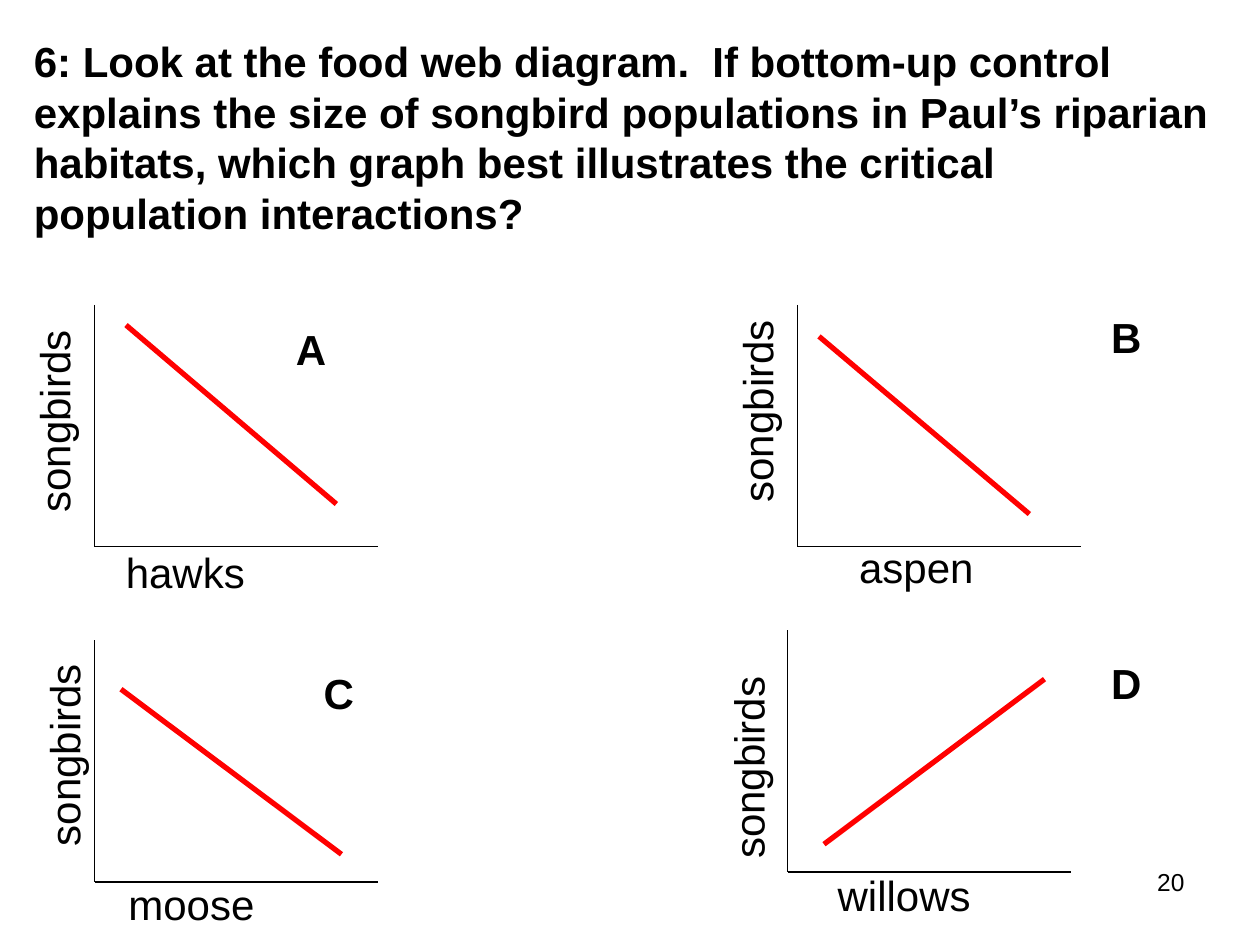
"""Build a quiz slide with four small songbird graphs."""
from pptx import Presentation
from pptx.dml.color import RGBColor
from pptx.enum.shapes import MSO_CONNECTOR
from pptx.enum.text import MSO_ANCHOR, MSO_AUTO_SIZE, PP_ALIGN
from pptx.oxml.ns import qn
from pptx.util import Inches, Pt
from lxml.etree import SubElement

BLACK, RED = "000000", "FF0000"
AXIS_WIDTH, AXIS_HEIGHT = 2.25, 1.92
LABEL_HEIGHT = 0.5


def colour(value):
    return RGBColor.from_string(value)


class QuizSlide:
    def __init__(self, page, font="Arial", size=24):
        self.page, self.font, self.size = page, font, size

    def text(self, words, left, top, width, height=LABEL_HEIGHT, bold=False, size=None,
             align=PP_ALIGN.LEFT, anchor=MSO_ANCHOR.TOP, wrap=True, rotation=0):
        box = self.page.shapes.add_textbox(
            Inches(left), Inches(top), Inches(width), Inches(height))
        box.rotation = rotation
        frame = box.text_frame
        frame.word_wrap = wrap
        frame.auto_size = MSO_AUTO_SIZE.NONE if wrap else MSO_AUTO_SIZE.SHAPE_TO_FIT_TEXT
        frame.vertical_anchor = anchor
        para = frame.paragraphs[0]
        para.text = words
        para.alignment = align
        para.font.name = self.font
        para.font.size = Pt(size or self.size)
        para.font.bold = bold
        para.font.color.rgb = colour(BLACK)

    def line(self, start, end, hue=BLACK, width=0.75, shapes=None):
        connector = (shapes or self.page.shapes).add_connector(
            MSO_CONNECTOR.STRAIGHT, *(Inches(value) for value in (*start, *end)))
        connector.line.color.rgb = colour(hue)
        connector.line.width = Pt(width)
        SubElement(connector._element.spPr, qn("a:effectLst"))

    def axes(self, left, top):
        group = self.page.shapes.add_group_shape()
        bottom = top + AXIS_HEIGHT
        self.line((left, top), (left, bottom), shapes=group.shapes)
        self.line((left, bottom), (left + AXIS_WIDTH, bottom), shapes=group.shapes)

    def graph(self, letter, letter_at, origin, species, species_at, species_width,
              songbirds_at, trend):
        self.axes(*origin)
        self.text(species, *species_at, species_width, wrap=False)
        self.text("songbirds", *songbirds_at, 1.65, wrap=False, rotation=270)
        self.line(*trend, hue=RED, width=3)
        self.text(letter, *letter_at, 0.44, bold=True, wrap=False)


GRAPHS = [
    ("A", (2.25, 2.52), (0.75, 2.42), "hawks", (0.9, 4.29), 1.15,
     (-0.4, 3.09), ((1, 2.58), (2.67, 4))),
    ("B", (8.72, 2.42), (6.33, 2.42), "aspen", (6.72, 4.25), 1.11,
     (5.18, 3.01), ((6.5, 2.67), (8.17, 4.08))),
    ("C", (2.47, 5.25), (0.75, 5.08), "moose", (0.92, 6.92), 1.2,
     (-0.32, 5.74), ((2.71, 6.78), (0.96, 5.47))),
    ("D", (8.72, 5.17), (6.25, 5), "willows", (6.55, 6.85), 1.26,
     (5.11, 5.84), ((6.54, 6.7), (8.29, 5.39))),
]


def main():
    deck = Presentation()
    deck.slide_width, deck.slide_height = Inches(10), Inches(7.5)
    slide = QuizSlide(deck.slides.add_slide(deck.slide_layouts[6]))
    slide.text(
        "6: Look at the food web diagram.  If bottom-up control explains the size of "
        "songbird populations in Paul’s riparian habitats, which graph best illustrates "
        "the critical population interactions?",
        0.17, 0.25, 9.58, 1.67, bold=True, anchor=MSO_ANCHOR.MIDDLE)
    for graph in GRAPHS:
        slide.graph(*graph)
    slide.text("20", 7.17, 6.83, 2.33, 0.52, size=14, align=PP_ALIGN.RIGHT)
    deck.save("out.pptx")


if __name__ == "__main__":
    main()
